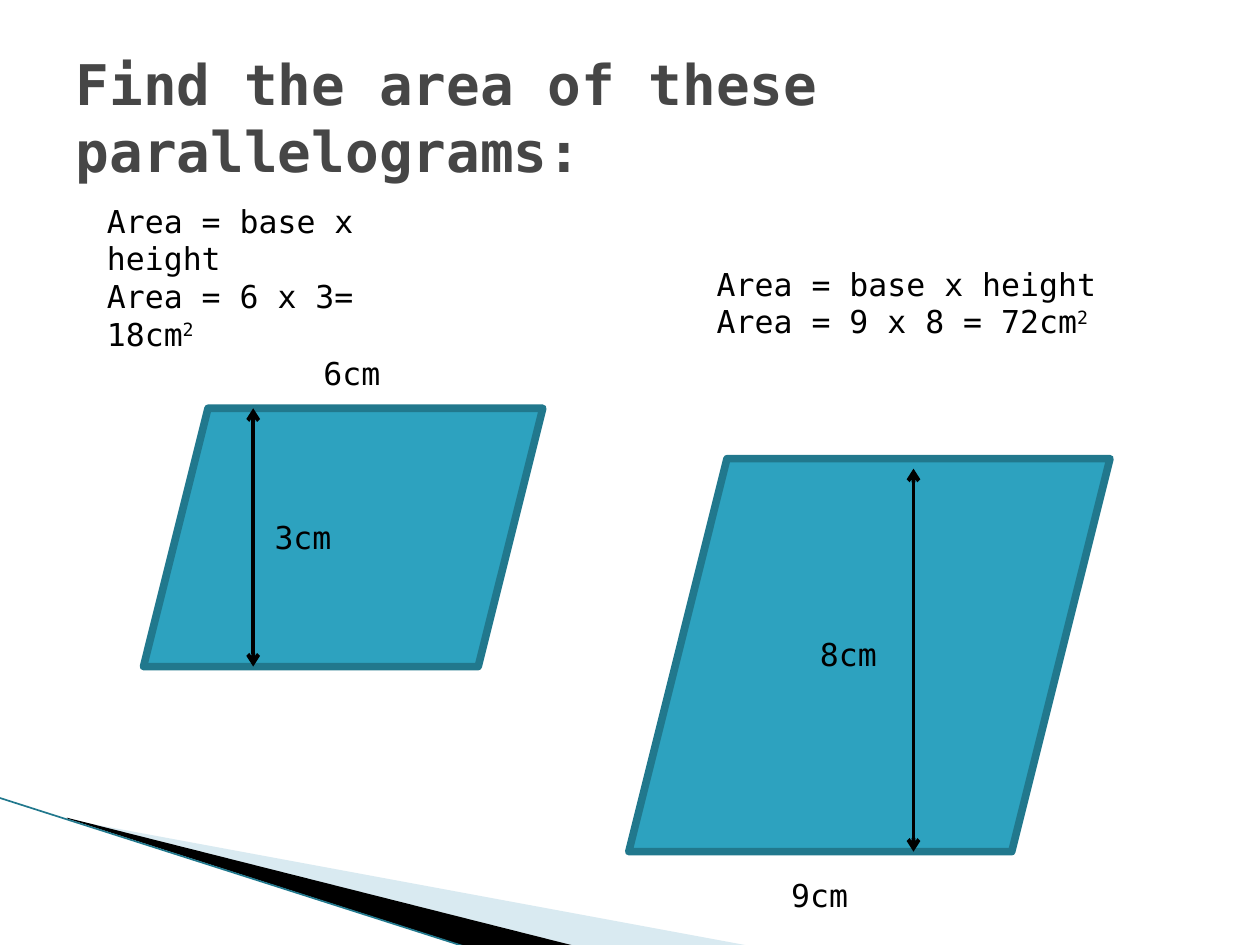
from dataclasses import dataclass

from lxml.etree import SubElement
from pptx import Presentation
from pptx.dml.color import RGBColor
from pptx.enum.shapes import MSO_CONNECTOR, MSO_SHAPE
from pptx.enum.text import MSO_ANCHOR, PP_ALIGN
from pptx.oxml.ns import qn
from pptx.slide import Slide
from pptx.util import Pt

FONT = "DejaVu Sans Mono"
COLORS = {
    "title": "464646",
    "text": "000000",
    "shape": "2DA2BF",
    "edge": "21788D",
    "pale": "A0CBDC",
    "wedge": "000000",
}


@dataclass
class Label:
    text: str
    left: float
    top: float


@dataclass
class Problem:
    """A parallelogram with its height arrow, side labels and worked answer."""
    left: float
    top: float
    width: float
    height: float
    arrow_x: float
    arrow_top: float
    labels: list[Label]
    answer: Label
    answer_width: float


PROBLEMS = [
    Problem(82, 233.3, 228.2, 147.6, 144.7, 233.3,
            [Label("6cm", 177.8, 198.7), Label("3cm", 149.8, 292.3)],
            Label("Area = 6 x 3= 18cm", 54, 111.6), 215.3),
    Problem(359.3, 262.1, 275, 224.6, 522, 267.8,
            [Label("9cm", 445, 496.8), Label("8cm", 461.5, 359.3)],
            Label("Area = 9 x 8 = 72cm", 402.5, 147.6), 268.6),
]


def color(name: str) -> RGBColor:
    return RGBColor.from_string(COLORS[name])


def add_span(para, text: str, *, size: float = 18, bold: bool = False,
             ink: str = "text", superscript: bool = False) -> None:
    span = para.add_run()
    span.text = text
    span.font.name = FONT
    span.font.size = Pt(size)
    span.font.bold = bold
    span.font.color.rgb = color(ink)
    if superscript:
        span._r.get_or_add_rPr().set("baseline", "30000")


def add_box(page: Slide, left: float, top: float, width: float, height: float):
    box = page.shapes.add_textbox(Pt(left), Pt(top), Pt(width), Pt(height))
    box.text_frame.word_wrap = True
    return box.text_frame


def add_line(page: Slide, start: tuple[float, float], end: tuple[float, float],
             ink: str, width: float, arrows: bool = False) -> None:
    line = page.shapes.add_connector(
        MSO_CONNECTOR.STRAIGHT, *(Pt(value) for value in start + end))
    line.line.color.rgb = color(ink)
    line.line.width = Pt(width)
    properties = line._element.spPr
    if arrows:
        for name in ("a:headEnd", "a:tailEnd"):
            SubElement(properties.find(qn("a:ln")), qn(name), type="arrow")
    SubElement(properties, qn("a:effectLst"))


def add_wedge(page: Slide, points: list[tuple[float, float]], ink: str,
              opacity: int = 100) -> None:
    corners = [(Pt(x), Pt(y)) for x, y in points]
    builder = page.shapes.build_freeform(*corners[0])
    builder.add_line_segments(corners[1:], close=True)
    wedge = builder.convert_to_shape()
    wedge.shadow.inherit = False
    wedge.fill.solid()
    wedge.fill.fore_color.rgb = color(ink)
    wedge.line.fill.background()
    if opacity < 100:
        fill = wedge._element.spPr.find(f"{qn('a:solidFill')}/{qn('a:srgbClr')}")
        SubElement(fill, qn("a:alpha"), val=str(opacity * 1000))


def add_parallelogram(page: Slide, problem: Problem) -> None:
    shape = page.shapes.add_shape(
        MSO_SHAPE.PARALLELOGRAM, Pt(problem.left), Pt(problem.top),
        Pt(problem.width), Pt(problem.height))
    shape.shadow.inherit = False
    shape.fill.solid()
    shape.fill.fore_color.rgb = color("shape")
    shape.line.color.rgb = color("edge")
    shape.line.width = Pt(4.33)


def add_problem(page: Slide, problem: Problem) -> None:
    add_parallelogram(page, problem)
    add_line(page, (problem.arrow_x, problem.arrow_top),
             (problem.arrow_x, problem.top + problem.height),
             "text", 2.25, arrows=True)
    for label in problem.labels:
        frame = add_box(page, label.left, label.top, 79.2, 28.8)
        add_span(frame.paragraphs[0], label.text)
    answer = problem.answer
    frame = add_box(page, answer.left, answer.top, problem.answer_width, 72.7)
    add_span(frame.paragraphs[0], "Area = base x height")
    para = frame.add_paragraph()
    add_span(para, answer.text)
    add_span(para, "2", superscript=True)


def main() -> None:
    deck = Presentation()
    deck.slide_width, deck.slide_height = Pt(720), Pt(540)
    page = deck.slides.add_slide(deck.slide_layouts[5])

    # Corner decoration
    add_wedge(page, [(39.6, 468.5), (428.4, 540.5), (328.3, 540.5), (39.6, 468)],
              "pale", opacity=40)
    add_wedge(page, [(38.2, 467.3), (329, 540.7), (267.8, 541.4), (38.9, 468)],
              "wedge")
    add_line(page, (-0.7, 455.8), (267.1, 541.4), "edge", 0.95)

    # Title
    title = page.shapes.title
    title.left, title.top, title.width, title.height = (
        Pt(36), Pt(21.6), Pt(648), Pt(90))
    title.text_frame.word_wrap = True
    title.text_frame.vertical_anchor = MSO_ANCHOR.MIDDLE
    para = title.text_frame.paragraphs[0]
    para.alignment = PP_ALIGN.LEFT
    add_span(para, "Find the area of these parallelograms:",
             size=32, bold=True, ink="title")

    # Worked problems
    for problem in PROBLEMS:
        add_problem(page, problem)

    deck.save("out.pptx")


if __name__ == "__main__":
    main()
